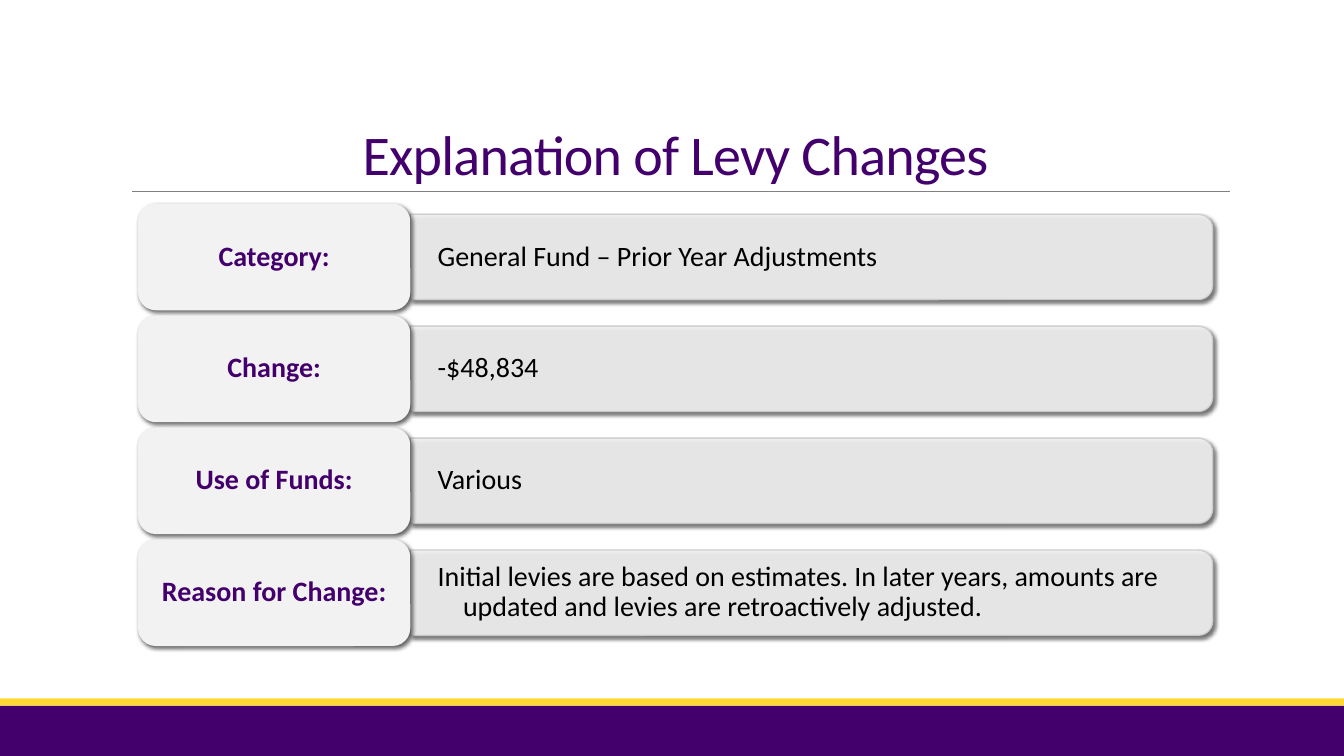
"""Build the levy changes slide: a title, four labelled rows and a footer band."""
from dataclasses import dataclass

from lxml.etree import SubElement
from pptx import Presentation
from pptx.dml.color import RGBColor as Rgb
from pptx.enum.shapes import MSO_CONNECTOR as Connector, MSO_SHAPE as Preset
from pptx.enum.text import MSO_ANCHOR as Anchor, PP_ALIGN as Align
from pptx.oxml.ns import qn
from pptx.util import Cm, Pt

TITLE = "Explanation of Levy Changes"
ROWS = [
    ("Category:", "General Fund – Prior Year Adjustments"),
    ("Change:", "-$48,834"),
    ("Use of Funds:", "Various"),
    ("Reason for Change:", "Initial levies are based on estimates. In later years, "
                           "amounts are updated and levies are retroactively adjusted."),
]


@dataclass(frozen=True)
class Theme:
    """Colours, font and type sizes."""
    purple: str = "43006C"
    gold: str = "FFD833"
    rule: str = "808080"
    panel: str = "F2F2F2"
    edge: str = "CDCDD1"
    ink: str = "000000"
    font: str = "Calibri"
    title_size: int = 40
    row_size: int = 20


THEME = Theme()
WIDTH, HEIGHT = 33.87, 19.05
FOOTER_TOP, STRIPE_HEIGHT = 17.78, 0.18
ROWS_TOP, ROW_PITCH = 5.13, 2.82
LABEL_LEFT, LABEL_WIDTH, LABEL_HEIGHT = 3.48, 6.86, 2.69
BAR_LEFT, BAR_LENGTH, BAR_HEIGHT = LABEL_LEFT + LABEL_WIDTH, 20.22, 2.15
DETAIL_WIDTH, DETAIL_HEIGHT = 20.12, 1.93


def add_panel(slide, preset, left, top, width, height, color):
    panel = slide.shapes.add_shape(preset, Cm(left), Cm(top), Cm(width), Cm(height))
    panel.shadow.inherit = False
    panel.fill.solid()
    panel.fill.fore_color.rgb = Rgb.from_string(color)
    panel.line.fill.background()
    return panel


def add_shadow(panel):
    effects = panel._element.spPr.find(qn("a:effectLst"))
    shadow = SubElement(effects, qn("a:outerShdw"), blurRad=str(Pt(3)),
                        dist=str(Pt(2)), dir="2700000", rotWithShape="0")
    black = SubElement(shadow, qn("a:srgbClr"), val=THEME.ink)
    SubElement(black, qn("a:alpha"), val="60000")


def write(shape, text, size, color, align, spacing, anchor=Anchor.MIDDLE):
    frame = shape.text_frame
    frame.word_wrap = True
    frame.vertical_anchor = anchor
    paragraph = frame.paragraphs[0]
    paragraph.text = text
    paragraph.alignment = align
    paragraph.line_spacing = spacing
    paragraph.font.name = THEME.font
    paragraph.font.size = Pt(size)
    paragraph.font.color.rgb = Rgb.from_string(color)
    return paragraph


def add_frame(slide):
    add_panel(slide, Preset.RECTANGLE, 0, FOOTER_TOP, WIDTH, HEIGHT - FOOTER_TOP, THEME.purple)
    add_panel(slide, Preset.RECTANGLE, 0, FOOTER_TOP - STRIPE_HEIGHT, WIDTH, STRIPE_HEIGHT,
              THEME.gold)
    rule = slide.shapes.add_connector(Connector.STRAIGHT, Cm(3.33), Cm(4.82), Cm(31), Cm(4.82))
    rule.line.color.rgb = Rgb.from_string(THEME.rule)
    rule.line.width = Pt(0.5)
    SubElement(rule._element.spPr, qn("a:effectLst"))
    title = slide.shapes.add_textbox(Cm(3.05), Cm(0.79), Cm(27.94), Cm(4.04))
    heading = write(title, TITLE, THEME.title_size, THEME.purple, Align.CENTER, 0.85,
                    Anchor.BOTTOM)
    heading.runs[0]._r.get_or_add_rPr().set("spc", "-50")


def add_bar(slide, middle):
    bar = add_panel(slide, Preset.ROUND_2_SAME_RECTANGLE,
                    BAR_LEFT + (BAR_LENGTH - BAR_HEIGHT) / 2, middle - BAR_LENGTH / 2,
                    BAR_HEIGHT, BAR_LENGTH, THEME.panel)
    bar.rotation = 90
    bar.line.color.rgb = Rgb.from_string(THEME.edge)
    bar.line.width = Pt(1)
    for color in list(bar._element.spPr.iter(qn("a:srgbClr"))):
        SubElement(color, qn("a:alpha"), val="90000")
    add_shadow(bar)


def add_detail(slide, detail, middle):
    box = slide.shapes.add_textbox(Cm(BAR_LEFT), Cm(middle - DETAIL_HEIGHT / 2),
                                   Cm(DETAIL_WIDTH), Cm(DETAIL_HEIGHT))
    frame = box.text_frame
    frame.margin_left = frame.margin_right = Cm(0.69)
    frame.margin_top = frame.margin_bottom = Cm(0.35)
    paragraph = write(box, detail, THEME.row_size, THEME.ink, Align.LEFT, 0.9)
    indents = paragraph._p.get_or_add_pPr()
    indents.set("marL", str(Cm(0.64)))
    indents.set("indent", str(-Cm(0.64)))


def add_label(slide, label, top):
    panel = add_panel(slide, Preset.ROUNDED_RECTANGLE, LABEL_LEFT, top,
                      LABEL_WIDTH, LABEL_HEIGHT, THEME.panel)
    add_shadow(panel)
    write(panel, label, THEME.row_size, THEME.purple, Align.CENTER, 0.9).font.bold = True


def main():
    deck = Presentation()
    deck.slide_width, deck.slide_height = Cm(WIDTH), Cm(HEIGHT)
    slide = deck.slides.add_slide(deck.slide_layouts[6])
    add_frame(slide)
    for index, (label, detail) in enumerate(ROWS):
        top = ROWS_TOP + index * ROW_PITCH
        middle = top + LABEL_HEIGHT / 2
        add_bar(slide, middle)
        add_detail(slide, detail, middle)
        add_label(slide, label, top)
    deck.save("out.pptx")


if __name__ == "__main__":
    main()
